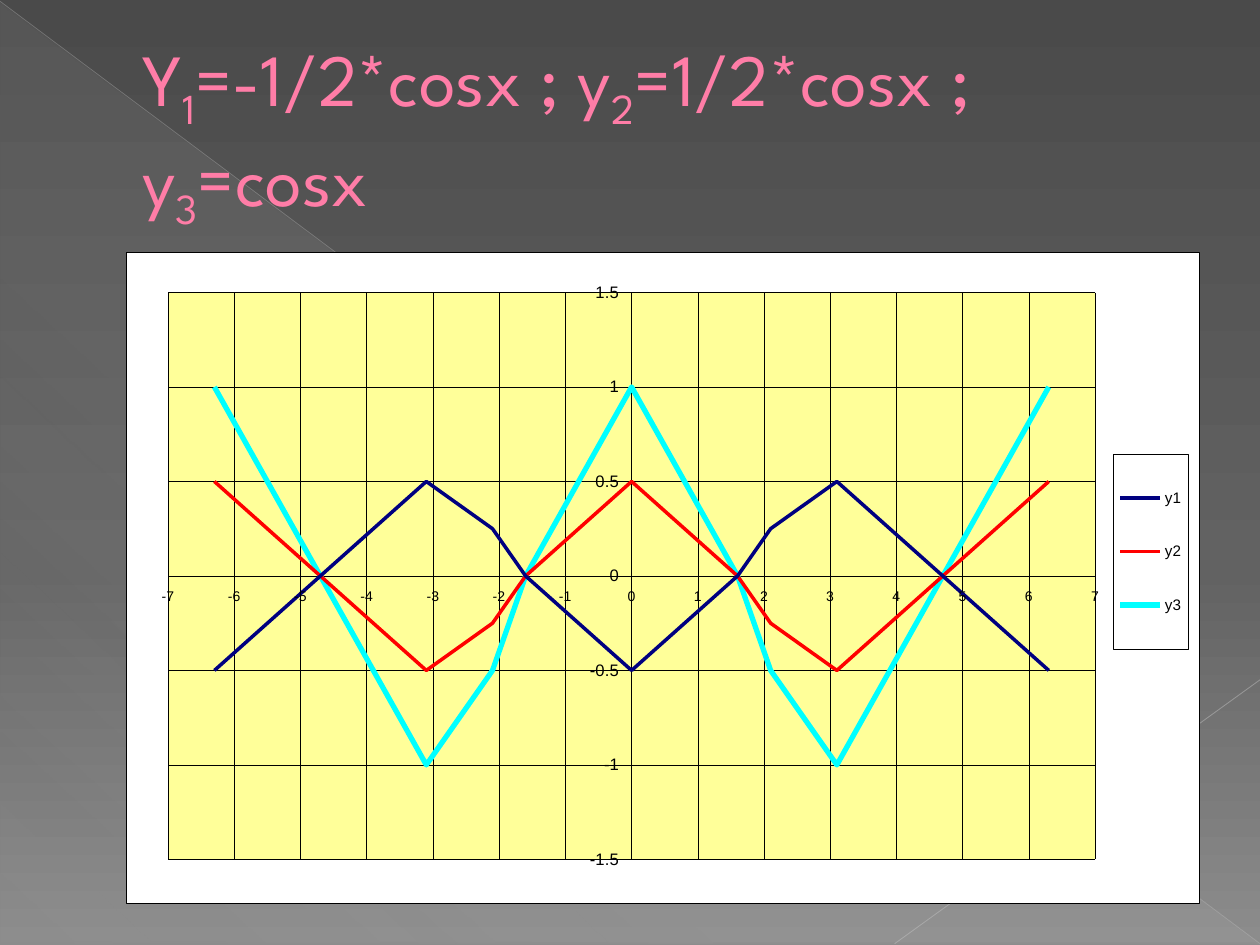
from dataclasses import dataclass

from pptx import Presentation
from pptx.chart.data import XyChartData
from pptx.dml.color import RGBColor as RGB
from pptx.enum.chart import XL_CHART_TYPE as CT, XL_LEGEND_POSITION as LP, XL_TICK_MARK as TM
from pptx.enum.shapes import MSO_CONNECTOR as CN, MSO_SHAPE as SH
from pptx.enum.text import MSO_ANCHOR as ANC
from pptx.oxml import parse_xml
from pptx.oxml.ns import nsdecls, qn
from pptx.util import Inches, Pt


@dataclass(frozen=True)
class Theme:
    """Colours, fonts and type sizes of the slide."""
    title_font: str = "League Spartan"
    chart_font: str = "Arial"
    title: str = "FF7DA7"
    title_edge: str = "B12761"
    ink: str = "000000"
    paper: str = "FFFFFF"
    plot: str = "FFFF99"
    back: tuple = ((0, "4A4A4A", 100), (60, "626262", 100), (100, "8C8C8C", 100))
    veil: tuple = ((0, "D2D2D2", 10), (70, "D2D2D2", 8), (100, "D2D2D2", 1))
    title_size: float = 42
    x_size: float = 8
    y_size: float = 9.5
    legend_size: float = 8.7
    hairline: float = 0.25


T = Theme()
W, H = 10, 7.5
XS = (-6.3, -4.7, -3.1, -2.1, -1.6, 0, 1.6, 2.1, 3.1, 4.7, 6.3)
COSINE = (1, 0, -1, -0.5, 0, 1, 0, -0.5, -1, 0, 1)
CURVES = (("y1", -0.5, "000080", 2), ("y2", 0.5, "FF0000", 2), ("y3", 1, "00FFFF", 3))


def color_xml(color, alpha=100):
    """Return a colour element with its opacity in percent."""
    return f'<a:srgbClr val="{color}"><a:alpha val="{alpha * 1000}"/></a:srgbClr>'


def set_gradient(parent, stops, angle):
    """Put a linear gradient in place of the parent's solid fill."""
    gs = "".join(f'<a:gs pos="{p * 1000}">{color_xml(c, a)}</a:gs>' for p, c, a in stops)
    grad = parse_xml(f'<a:gradFill {nsdecls("a")} rotWithShape="1"><a:gsLst>{gs}</a:gsLst>'
                     f'<a:lin ang="{angle * 60000}" scaled="0"/></a:gradFill>')
    parent.replace(parent.find(qn("a:solidFill")), grad)


def box_style(fill, line):
    """Return chart shape properties with a solid fill and a thin border."""
    edge = f"<a:solidFill>{color_xml(line)}</a:solidFill>" if line else "<a:noFill/>"
    return parse_xml(f'<c:spPr {nsdecls("c", "a")}><a:solidFill>{color_xml(fill)}</a:solidFill>'
                     f'<a:ln w="{Pt(T.hairline)}">{edge}</a:ln></c:spPr>')


def manual_layout(x, y, w, h, inner=False):
    """Return a chart layout given as shares of the chart's size."""
    target = '<c:layoutTarget val="inner"/>' if inner else ""
    return parse_xml(f'<c:layout {nsdecls("c")}><c:manualLayout>{target}'
                     '<c:xMode val="edge"/><c:yMode val="edge"/>'
                     f'<c:x val="{x}"/><c:y val="{y}"/><c:w val="{w}"/><c:h val="{h}"/>'
                     '</c:manualLayout></c:layout>')


def set_font(font, size):
    """Set the chart's font face, colour and size."""
    font.name, font.size = T.chart_font, Pt(size)
    font.color.rgb = RGB.from_string(T.ink)


def set_line(line, color, width):
    """Set a line's colour and width."""
    line.color.rgb = RGB.from_string(color)
    line.width = Pt(width)


def add_backdrop(s, x, y, w, h):
    """Draw the gradient, the veil triangle and the two diagonals."""
    s.background.fill.solid()
    set_gradient(s.background._cSld.bg.bgPr, T.back, 90)
    sp = s.shapes.add_shape(SH.RIGHT_TRIANGLE, *map(Inches, (x, y, w, h)))
    sp.shadow.inherit = False
    sp.fill.solid()
    set_gradient(sp._element.spPr, T.veil, 133)
    sp.line.fill.background()
    diagonals = (((0, 0), (1, 1), "BFBFBF", 0.39, 35),
                 ((1, 0.72), (0.71, 1), "C6C6C6", 0.47, 45))
    for (x1, y1), (x2, y2), color, width, alpha in diagonals:
        ends = (x + x1 * w, y + y1 * h, x + x2 * w, y + y2 * h)
        cx = s.shapes.add_connector(CN.STRAIGHT, *map(Inches, ends))
        set_line(cx.line, color, width)
        fill = cx.line._ln.find(qn("a:solidFill"))
        fill[0].append(parse_xml(f'<a:alpha {nsdecls("a")} val="{alpha * 1000}"/>'))
        cx._element.spPr.append(parse_xml(f'<a:effectLst {nsdecls("a")}/>'))


def add_title(s, x, y, w, h):
    """Write the three formulas with their indices as subscripts."""
    tf = s.shapes.add_textbox(*map(Inches, (x, y, w, h))).text_frame
    tf.word_wrap = True
    tf.vertical_anchor = ANC.MIDDLE
    p = tf.paragraphs[0]
    pr = p._p.get_or_add_pPr()
    pr.set("marL", str(Inches(0.53)))
    pr.set("indent", "0")
    for i, text in enumerate(("Y", "1", "=-1/2*cosx ; y", "2", "=1/2*cosx ; y", "3", "=cosx")):
        r = p.add_run()
        r.text = text
        r.font.name, r.font.size = T.title_font, Pt(T.title_size)
        r.font.color.rgb = RGB.from_string(T.title)
        rpr = r.font._element
        rpr.insert(0, parse_xml(f'<a:ln {nsdecls("a")} w="{Pt(0.5)}"><a:solidFill>'
                                f'{color_xml(T.title_edge)}</a:solidFill></a:ln>'))
        if i % 2:
            rpr.set("baseline", "-25000")


def style_axis(axis, limit, step, size):
    """Set an axis symmetric about zero, with its grid and labels."""
    axis.minimum_scale, axis.maximum_scale, axis.major_unit = -limit, limit, step
    axis.major_tick_mark, axis.minor_tick_mark = TM.OUTSIDE, TM.NONE
    axis.has_major_gridlines = True
    set_line(axis.format.line, T.ink, T.hairline)
    set_line(axis.major_gridlines.format.line, T.ink, T.hairline)
    set_font(axis.tick_labels.font, size)


def add_legend(chart):
    """Place the framed legend at the right."""
    chart.has_legend = True
    legend = chart.legend
    legend.position = LP.RIGHT
    legend.include_in_layout = False
    set_font(legend.font, T.legend_size)
    el = legend._element
    for old in el.findall(qn("c:layout")):
        el.remove(old)
    el.find(qn("c:overlay")).addprevious(manual_layout(0.92, 0.31, 0.07, 0.3))
    el.find(qn("c:txPr")).addprevious(box_style(T.paper, T.ink))


def add_curves(s, x, y, w, h):
    """Chart the scaled cosine curves."""
    data = XyChartData()
    for name, scale, *_ in CURVES:
        series = data.add_series(name)
        for px, py in zip(XS, COSINE):
            series.add_data_point(px, scale * py + 0)
    frame = s.shapes.add_chart(CT.XY_SCATTER_SMOOTH_NO_MARKERS, *map(Inches, (x, y, w, h)), data)
    chart = frame.chart
    chart.has_title = False
    set_font(chart.font, T.y_size)
    style_axis(chart.category_axis, 7, 1, T.x_size)
    style_axis(chart.value_axis, 1.5, 0.5, T.y_size)
    chart.plots[0].vary_by_categories = False
    for series, (_, _, color, width) in zip(chart.plots[0].series, CURVES):
        set_line(series.format.line, color, width)
        series.smooth = True
    add_legend(chart)
    root = chart._chartSpace
    root.find(qn("c:chart")).addnext(box_style(T.paper, T.ink))
    area = root.find(qn("c:chart")).find(qn("c:plotArea"))
    for old in area.findall(qn("c:layout")):
        area.remove(old)
    area.insert(0, manual_layout(0.039, 0.062, 0.864, 0.871, inner=True))
    area.append(box_style(T.plot, None))


def main():
    """Build the slide and save it."""
    prs = Presentation()
    prs.slide_width, prs.slide_height = Inches(W), Inches(H)
    s = prs.slides.add_slide(prs.slide_layouts[6])
    add_backdrop(s, 0, 0.01, W, H - 0.02)
    add_title(s, 0.05 * W, 0.29, 0.9 * W, 1.53)
    add_curves(s, 0.1 * W, 2, 8.52, 5.17)
    prs.save("out.pptx")


if __name__ == "__main__":
    main()
